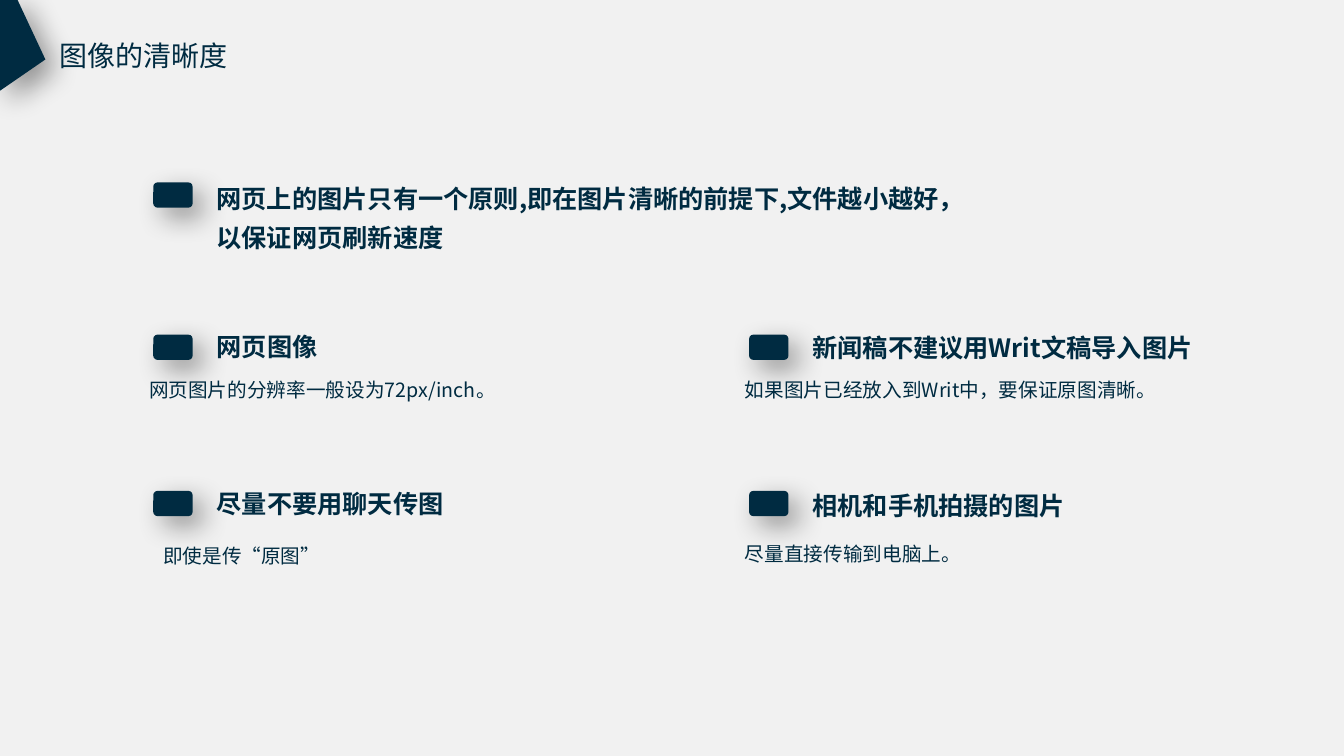
from lxml.etree import SubElement
from pptx import Presentation
from pptx.dml.color import RGBColor
from pptx.enum.shapes import MSO_SHAPE as Preset
from pptx.enum.text import MSO_AUTO_SIZE as AutoSize
from pptx.oxml.ns import qn
from pptx.util import Inches, Pt

FONT = "Noto Sans CJK SC"
NAVY = "002B41"
PAPER = "F1F1F1"
HEADING = {"size": Pt(18), "bold": True}
BODY = {"size": Pt(14), "bold": False}
TITLE = {"size": Pt(20), "bold": False}
LEFT, RIGHT = 1.38, 7.29


def color(value):
    """Turn a hex string into a colour."""
    return RGBColor.from_string(value)


def style_shape(shape):
    """Give a shape the navy fill and its soft diagonal shadow."""
    shape.fill.solid()
    shape.fill.fore_color.rgb = color(NAVY)
    shape.line.fill.background()
    shape.shadow.inherit = False
    effects = shape._element.spPr.find(qn("a:effectLst"))
    shadow = SubElement(effects, qn("a:outerShdw"), blurRad=str(Pt(20)),
                        dist=str(Pt(10)), dir="2700000", algn="tl", rotWithShape="0")
    tint = SubElement(shadow, qn("a:srgbClr"), val="000000")
    SubElement(tint, qn("a:alpha"), val="40000")


def add_text(page, box, text, formats, spacing=None, wrap=True):
    """Place one paragraph of navy text in a box."""
    frame = page.shapes.add_textbox(*map(Inches, box)).text_frame
    frame.word_wrap = wrap
    frame.auto_size = AutoSize.SHAPE_TO_FIT_TEXT
    para = frame.paragraphs[0]
    if spacing:
        para.line_spacing = spacing
    span = para.add_run()
    span.text = text
    for name, value in {**formats, "name": FONT}.items():
        setattr(span.font, name, value)
    span.font.color.rgb = color(NAVY)
    SubElement(span.font._element, qn("a:ea"), typeface=FONT)


def add_header(page, box, text):
    """Draw the corner wedge and the slide title beside it."""
    left, top, width, height = box
    builder = page.shapes.build_freeform(Inches(left + 0.17), Inches(top))
    corners = [(left, top), (left, top + height), (left + width, top + 0.6)]
    builder.add_line_segments([tuple(map(Inches, corner)) for corner in corners])
    style_shape(builder.convert_to_shape())
    add_text(page, (left + 0.49, top + 0.34, 1.87, 0.44), text, TITLE, wrap=False)


def add_marker(page, left, top):
    """Draw a rounded bullet block."""
    marker = page.shapes.add_shape(Preset.ROUNDED_RECTANGLE,
                                   *map(Inches, (left, top, 0.39, 0.25)))
    style_shape(marker)


def add_principle(page, box, text):
    """Draw the leading statement with its marker."""
    left, top, width, height = box
    add_marker(page, left + 0.14, top + 0.13)
    add_text(page, (left + 0.67, top, width - 0.67, height), text, HEADING, 1.3)


def add_point(page, box, heading, body, heading_shift, body_offset):
    """Draw a marker, a heading and the line of text below them."""
    left, top, width, height = box
    body_left, body_top = body_offset
    add_marker(page, left + 0.14, top)
    add_text(page, (left + 0.67, top + heading_shift, width - 0.67, 0.4), heading, HEADING)
    add_text(page, (left + body_left, top + body_top, width, height - body_top),
             body, BODY, 1.3)


def main():
    """Build and save the slide."""
    deck = Presentation()
    deck.slide_width, deck.slide_height = Inches(13.33), Inches(7.5)
    page = deck.slides.add_slide(deck.slide_layouts[6])
    page.background.fill.solid()
    page.background.fill.fore_color.rgb = color(PAPER)
    add_header(page, (0, -0.01, 0.45, 0.91), "图像的清晰度")
    add_principle(page, (LEFT, 1.68, 8.34, 0.89),
                  "网页上的图片只有一个原则,即在图片清晰的前提下,文件越小越好，以保证网页刷新速度")
    points = [
        (LEFT, 3.32, "网页图像", "网页图片的分辨率一般设为72px/inch。", -0.08, (0, 0.31)),
        (RIGHT, 3.32, "新闻稿不建议用Writ文稿导入图片",
         "如果图片已经放入到Writ中，要保证原图清晰。", -0.07, (0, 0.31)),
        (LEFT, 4.87, "尽量不要用聊天传图", "即使是传“原图”", -0.07, (0.14, 0.41)),
        (RIGHT, 4.87, "相机和手机拍摄的图片", "尽量直接传输到电脑上。", -0.05, (0, 0.39)),
    ]
    for left, top, *content in points:
        add_point(page, (left, top, 5.06, 0.8), *content)
    deck.save("out.pptx")


if __name__ == "__main__":
    main()
